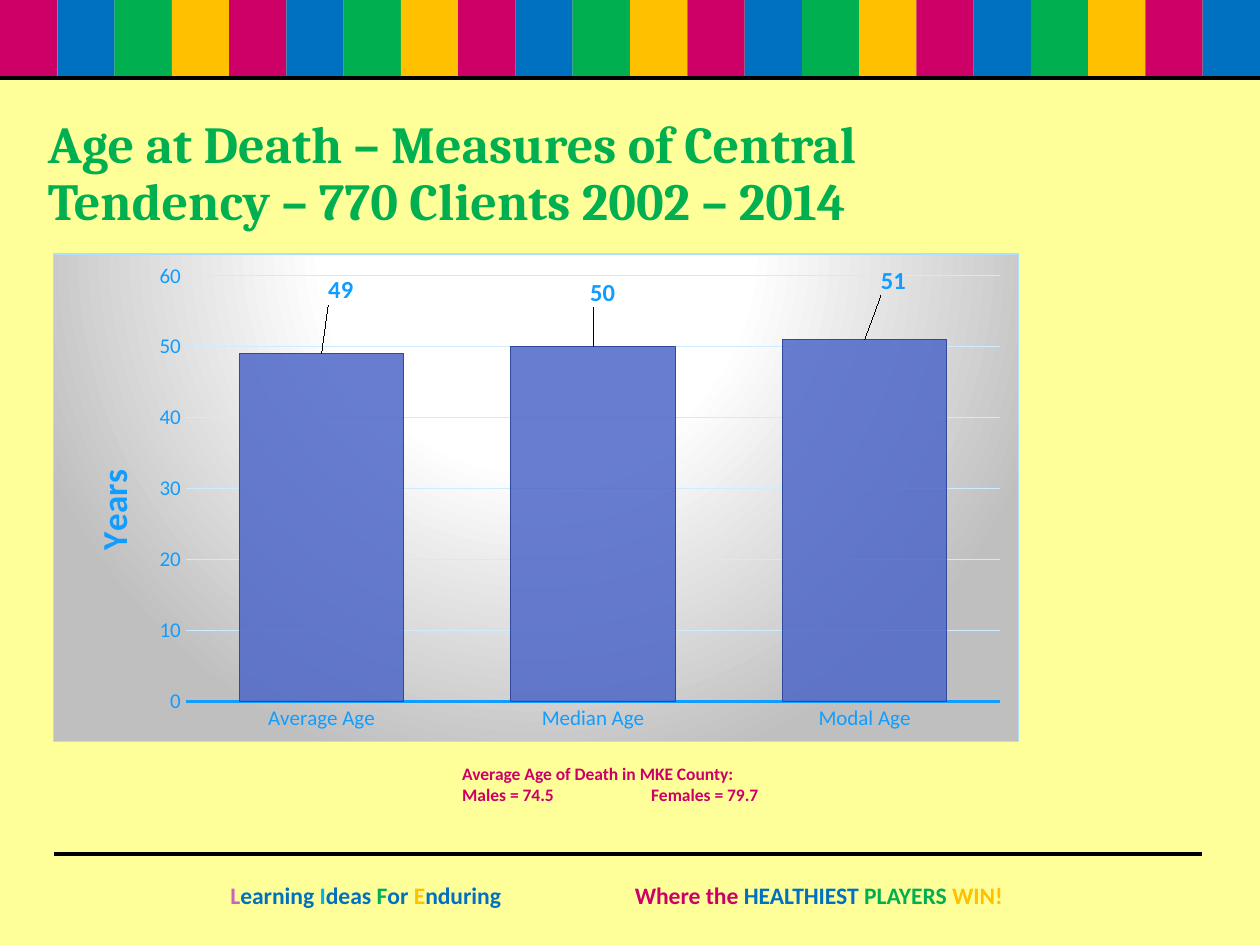
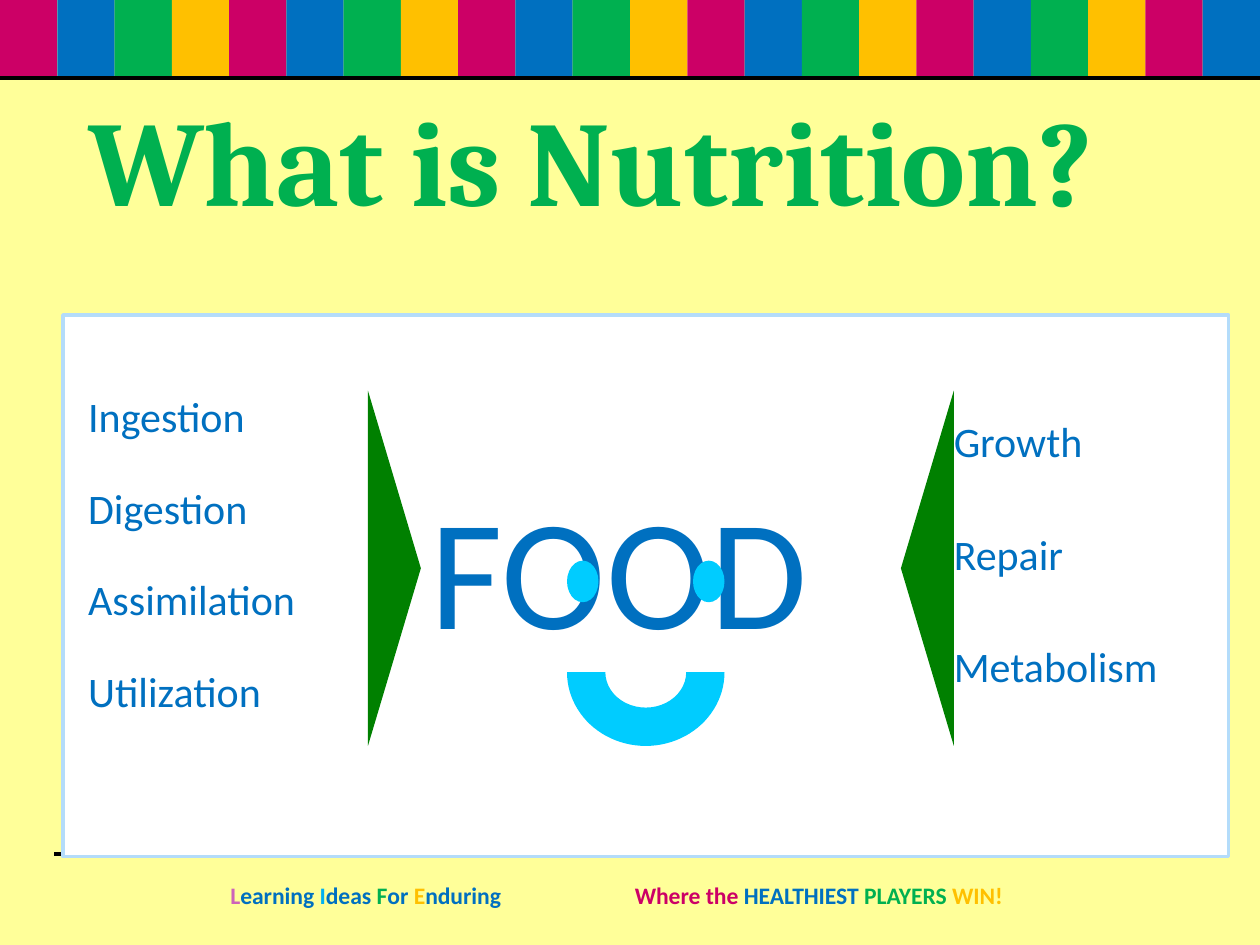
"""Builds two health slides: a chart of age at death and a nutrition diagram."""
from lxml import etree
from pptx import Presentation
from pptx.chart.data import CategoryChartData
from pptx.dml.color import RGBColor
from pptx.enum.chart import XL_CHART_TYPE, XL_LABEL_POSITION, XL_TICK_MARK
from pptx.enum.shapes import MSO_CONNECTOR, MSO_SHAPE
from pptx.enum.text import MSO_ANCHOR, MSO_AUTO_SIZE, PP_ALIGN
from pptx.oxml import parse_xml
from pptx.oxml.ns import nsdecls, qn
from pptx.util import Inches, Pt

COLUMN = XL_CHART_TYPE.COLUMN_CLUSTERED
OUTSIDE_END = XL_LABEL_POSITION.OUTSIDE_END
NO_TICK = XL_TICK_MARK.NONE
STRAIGHT = MSO_CONNECTOR.STRAIGHT
RECTANGLE = MSO_SHAPE.RECTANGLE
TRIANGLE = MSO_SHAPE.ISOSCELES_TRIANGLE
OVAL = MSO_SHAPE.OVAL
BLOCK_ARC = MSO_SHAPE.BLOCK_ARC
TOP, MIDDLE = MSO_ANCHOR.TOP, MSO_ANCHOR.MIDDLE
FIXED_SIZE = MSO_AUTO_SIZE.NONE
LEFT = PP_ALIGN.LEFT

PAPER = RGBColor(0xFF, 0xFF, 0x99)
WHITE = RGBColor(0xFF, 0xFF, 0xFF)
BLACK = RGBColor(0x00, 0x00, 0x00)
PINK = RGBColor(0xCC, 0x00, 0x66)
BLUE = RGBColor(0x00, 0x70, 0xC0)
GREEN = RGBColor(0x00, 0xB0, 0x50)
GOLD = RGBColor(0xFF, 0xC0, 0x00)
ORCHID = RGBColor(0xCD, 0x63, 0xB9)
SKY = RGBColor(0x00, 0xB0, 0xF0)
CYAN = RGBColor(0x00, 0xCC, 0xFF)
ARROW_GREEN = RGBColor(0x00, 0x80, 0x00)
PANEL_EDGE = RGBColor(0xB4, 0xDC, 0xFA)
AXIS_BLUE = RGBColor(0x11, 0x9C, 0xFF)
GRID_BLUE = RGBColor(0xCF, 0xEB, 0xFF)
BAR_FILL = RGBColor(0x4E, 0x67, 0xC8)
BAR_EDGE = RGBColor(0x31, 0x48, 0x9F)

BAND = [PINK, BLUE, GREEN, GOLD]
BAND_COLUMNS = 22
FOOTER = [("L", ORCHID), ("earning ", BLUE), ("I", SKY), ("deas ", BLUE),
          ("F", GREEN), ("or ", BLUE), ("E", GOLD), ("nduring\t", BLUE),
          ("Where the ", PINK), ("HEALTHIEST ", BLUE), ("PLAYERS ", GREEN),
          ("WIN!", GOLD)]


def write(shape, paragraphs, size, color=BLUE, font="Calibri", bold=False,
          anchor=TOP, inset=None, gap=0, tab=None, spacing=None):
    frame = shape.text_frame
    frame.word_wrap = True
    frame.auto_size = FIXED_SIZE
    frame.vertical_anchor = anchor
    if inset is not None:
        frame.margin_left = frame.margin_right = Inches(inset)
        frame.margin_top = frame.margin_bottom = Inches(inset)
    for number, runs in enumerate(paragraphs):
        paragraph = frame.add_paragraph() if number else frame.paragraphs[0]
        if tab:
            stops = etree.SubElement(paragraph._p.get_or_add_pPr(), qn("a:tabLst"))
            etree.SubElement(stops, qn("a:tab"), pos=str(Inches(tab)), algn="l")
        paragraph.alignment = LEFT
        if spacing:
            paragraph.line_spacing = spacing
        if number and gap:
            paragraph.space_before = Pt(gap)
        for words, run_color in [(runs, color)] if isinstance(runs, str) else runs:
            run = paragraph.add_run()
            run.text = words
            run.font.name = font
            run.font.size = Pt(size)
            run.font.bold = bold
            run.font.color.rgb = run_color


def paint(shape, fill):
    shape.shadow.inherit = False
    shape.fill.solid()
    shape.fill.fore_color.rgb = fill
    shape.line.fill.background()


prs = Presentation()
prs.slide_width, prs.slide_height = Inches(10), Inches(7.5)
background = prs.slide_master.background.fill
background.solid()
background.fore_color.rgb = PAPER

titles = [
    ("Age at Death – Measures of Central Tendency – 770 Clients 2002 – 2014",
     29.7, (0.28, 1.21, 7.05, 0.8)),
    ("What is Nutrition?", 69, (0.6, 0.7, 9.4, 1.25)),
]
for heading, size, box in titles:
    slide = prs.slides.add_slide(prs.slide_layouts[5])
    title = slide.shapes.title
    title.left, title.top, title.width, title.height = map(Inches, box)
    write(title, [heading], size, GREEN, "Cambria", True, MIDDLE, spacing=0.9)
    pitch = prs.slide_width / BAND_COLUMNS
    for column in range(BAND_COLUMNS):
        stripe = slide.shapes.add_shape(RECTANGLE, int(column * pitch), Inches(-0.03),
                                        int(pitch), Inches(0.65))
        paint(stripe, BAND[column % len(BAND)])
    motto = slide.shapes.add_textbox(*map(Inches, (1.73, 6.94, 7.81, 0.33)))
    write(motto, [FOOTER], 13.5, bold=True, tab=3.21)
    for start, end, height in [(0, 10, 0.62), (0.43, 9.54, 6.78)]:
        rule = slide.shapes.add_connector(
            STRAIGHT, *map(Inches, (start, height, end, height)))
        rule.line.color.rgb = BLACK
        rule.line.width = Pt(2.25)
        etree.SubElement(rule._element.spPr, qn("a:effectLst"))

age_slide, nutrition_slide = prs.slides
age_slide.shapes.title.text_frame.margin_bottom = Inches(0.49)

ages = CategoryChartData()
ages.categories = ["Average Age", "Median Age", "Modal Age"]
ages.add_series("Series 1", [49, 50, 51])
chart = age_slide.shapes.add_chart(
    COLUMN, *map(Inches, (0.42, 2.01, 7.67, 3.88)), ages).chart
chart.has_title = chart.has_legend = False
chart.font.name = "Calibri"
chart.font.size = Pt(10)
chart.font.color.rgb = BLUE

for axis in (chart.category_axis, chart.value_axis):
    axis.major_tick_mark = axis.minor_tick_mark = NO_TICK
    axis.tick_labels.font.name = "Calibri"
    axis.tick_labels.font.size = Pt(12)
    axis.tick_labels.font.color.rgb = AXIS_BLUE
chart.category_axis.format.line.color.rgb = AXIS_BLUE
chart.category_axis.format.line.width = Pt(1.5)
years = chart.value_axis
years.minimum_scale, years.maximum_scale, years.major_unit = 0, 60, 10
years.format.line.fill.background()
years.major_gridlines.format.line.color.rgb = GRID_BLUE
years.major_gridlines.format.line.width = Pt(0.75)
write(years.axis_title, ["Years"], 20, AXIS_BLUE, bold=True)
years_title = years.axis_title._element
for body in years_title.xpath(".//a:bodyPr"):
    body.set("rot", "-5400000")
    body.set("vert", "horz")

plot = chart.plots[0]
plot.gap_width = 65
plot.vary_by_categories = False
bars = plot.series[0]
bars.format.fill.solid()
bars.format.fill.fore_color.rgb = BAR_FILL
bars.format.line.color.rgb = BAR_EDGE
bars.format.line.width = Pt(0.75)
bar_color = bars._element.xpath("c:spPr/a:solidFill/a:srgbClr")[0]
etree.SubElement(bar_color, qn("a:alpha"), val="85000")
bars.data_labels.show_value = True
for index in range(3):
    label = bars.points[index].data_label
    label.font.name = "Calibri"
    label.font.size = Pt(14)
    label.font.bold = True
    label.font.color.rgb = AXIS_BLUE
    label.position = OUTSIDE_END

plot_area = chart._chartSpace.xpath("c:chart/c:plotArea")[0]
age_labels = bars._element.xpath("c:dLbls/c:dLbl")
label_shifts = [(0.02, -0.09), (0.01, -0.07), (0.03, -0.08)]
inner = {"layoutTarget": "inner", "xMode": "edge", "yMode": "edge",
         "x": 0.137, "y": 0.045, "w": 0.844, "h": 0.873}
edge = {"xMode": "edge", "yMode": "edge", "x": 0.03, "y": 0.43}
layouts = [(plot_area, 0, inner), (years_title, 1, edge)]
layouts += [(label, 1, {"x": x, "y": y})
            for label, (x, y) in zip(age_labels, label_shifts)]
for parent, position, settings in layouts:
    for former in parent.xpath("c:layout"):
        parent.remove(former)
    layout = etree.Element(qn("c:layout"))
    manual = etree.SubElement(layout, qn("c:manualLayout"))
    for key, value in settings.items():
        etree.SubElement(manual, qn("c:" + key), val=str(value))
    parent.insert(position, layout)

chart._chartSpace.xpath("c:chart")[0].addnext(parse_xml(
    f'<c:spPr {nsdecls("c", "a")}><a:gradFill><a:gsLst>'
    '<a:gs pos="0"><a:srgbClr val="FFFFFF"/></a:gs>'
    '<a:gs pos="39000"><a:srgbClr val="FFFFFF"/></a:gs>'
    '<a:gs pos="100000"><a:srgbClr val="BFBFBF"/></a:gs></a:gsLst>'
    '<a:path path="circle">'
    '<a:fillToRect l="50000" t="-80000" r="50000" b="180000"/></a:path></a:gradFill>'
    '<a:ln w="9525"><a:solidFill><a:srgbClr val="B0DEFF"/></a:solidFill></a:ln>'
    '</c:spPr>'))

county = age_slide.shapes.add_textbox(*map(Inches, (3.57, 5.89, 3.68, 0.67)))
write(county, ["Average Age of Death in MKE County:", "Males = 74.5\tFemales = 79.7"],
      10, PINK, bold=True, anchor=MIDDLE, tab=1.5)

panel = nutrition_slide.shapes.add_shape(
    RECTANGLE, *map(Inches, (0.5, 2.5, 9.25, 4.3)))
paint(panel, WHITE)
panel.line.color.rgb = PANEL_EDGE
panel.line.width = Pt(2)

word_lists = [
    (["Growth", "Repair", "Metabolism"], (7.57, 3.3, 2.1, 2.4), 24, 35.5),
    (["FOOD"], (3.42, 3.75, 3.67, 1.5), 90, 0),
    (["Ingestion", "Digestion", "Assimilation", "Utilization"],
     (0.7, 3.1, 2.4, 3.6), 24, 23.5),
]
for words, box, size, gap in word_lists:
    words_box = nutrition_slide.shapes.add_textbox(*map(Inches, box))
    write(words_box, words, size, inset=0, gap=gap)

figures = [
    (TRIANGLE, (1.72, 4.3, 2.82, 0.42), 90, ARROW_GREEN),
    (BLOCK_ARC, (4.5, 4.75, 1.25, 1.17), 180, CYAN),
    (TRIANGLE, (5.95, 4.3, 2.82, 0.42), 270, ARROW_GREEN),
    (OVAL, (4.5, 4.45, 0.25, 0.33), 0, CYAN),
    (OVAL, (5.5, 4.45, 0.25, 0.33), 0, CYAN),
]
for preset, box, angle, fill in figures:
    figure = nutrition_slide.shapes.add_shape(preset, *map(Inches, box))
    paint(figure, fill)
    figure.rotation = angle
    if preset == BLOCK_ARC:
        figure.adjustments[2] = 0.26

prs.save("out.pptx")
